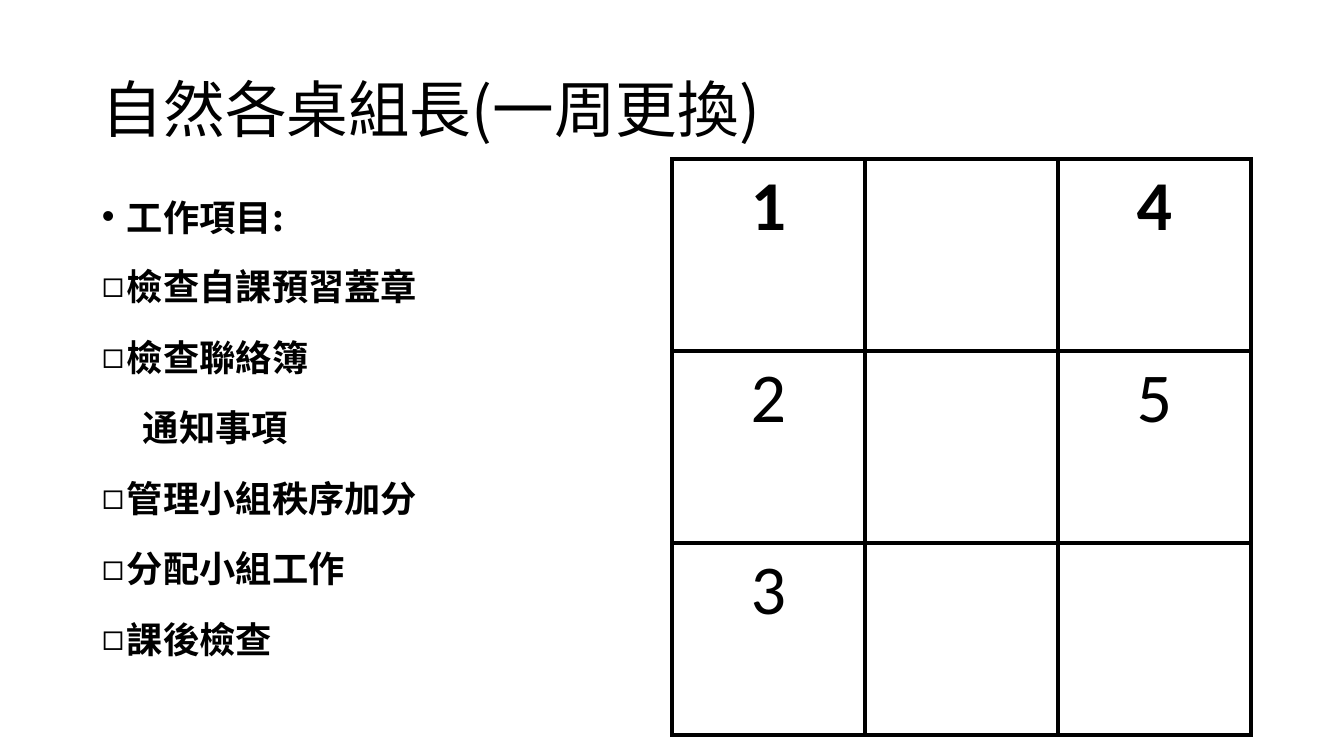
from dataclasses import dataclass

from lxml.etree import SubElement
from pptx import Presentation
from pptx.dml.color import RGBColor
from pptx.enum.text import MSO_ANCHOR, PP_ALIGN
from pptx.oxml.ns import qn
from pptx.util import Emu, Pt


@dataclass(frozen=True)
class Theme:
    ink: str = "000000"
    text_font: str = "Noto Sans CJK JP"
    number_font: str = "Calibri"
    bullet_font: str = "Arial"
    title_size: float = 44
    body_size: float = 25.9
    number_size: float = 50
    border_width: float = 3


THEME = Theme()
EMU_PER_PX = 914400 / 100.8
BOX = "◻"
HEADING = "工作項目:"
TASKS = [
    ("檢查自課預習蓋章", BOX),
    ("檢查聯絡簿", BOX),
    ("通知事項", None),
    ("管理小組秩序加分", BOX),
    ("分配小組工作", BOX),
    ("課後檢查", BOX),
]
DESKS = [["1", "", "4"], ["2", "", "5"], ["3", "", ""]]


def px(length):
    return Emu(round(length * EMU_PER_PX))


def write_text(paragraph, text, size, font=THEME.text_font, bold=False,
               align=PP_ALIGN.LEFT, line_spacing=None, space_before=0):
    paragraph.alignment = align
    paragraph.line_spacing = line_spacing
    paragraph.space_before = Pt(space_before)
    run = paragraph.add_run()
    run.text = text
    run.font.size = Pt(size)
    run.font.bold = bold
    run.font.name = font
    run.font.color.rgb = RGBColor.from_string(THEME.ink)
    SubElement(run.font._element, qn("a:ea"), typeface=font)


def set_indent(paragraph, margin, hanging=0, bullet=None):
    properties = paragraph._p.get_or_add_pPr()
    properties.set("marL", str(px(margin)))
    properties.set("indent", str(-px(hanging)))
    if bullet:
        SubElement(properties, qn("a:buFont"), typeface=THEME.bullet_font)
        SubElement(properties, qn("a:buChar"), char=bullet)


def add_text_frame(slide, left, top, width, height, anchor=MSO_ANCHOR.TOP):
    shape = slide.shapes.add_textbox(px(left), px(top), px(width), px(height))
    frame = shape.text_frame
    frame.word_wrap = True
    frame.vertical_anchor = anchor
    return frame


def add_title(slide, text):
    frame = add_text_frame(slide, 92, 40, 1159, 146, anchor=MSO_ANCHOR.MIDDLE)
    write_text(frame.paragraphs[0], text, THEME.title_size, line_spacing=0.9)


def add_task_list(slide, heading, tasks):
    frame = add_text_frame(slide, 92, 202, 1159, 480)
    paragraph = frame.paragraphs[0]
    write_text(paragraph, heading, THEME.body_size, bold=True,
               line_spacing=0.7, space_before=10)
    set_indent(paragraph, 25, hanging=25, bullet="•")
    for text, bullet in tasks:
        paragraph = frame.add_paragraph()
        write_text(paragraph, text, THEME.body_size, bold=True,
                   line_spacing=Pt(40.4), space_before=10)
        if bullet:
            set_indent(paragraph, 25, hanging=25, bullet=bullet)
        else:
            set_indent(paragraph, 41)


def set_borders(cell):
    properties = cell._tc.get_or_add_tcPr()
    for position, side in enumerate(("a:lnL", "a:lnR", "a:lnT", "a:lnB")):
        line = properties.makeelement(qn(side), {"w": str(Pt(THEME.border_width))})
        fill = SubElement(line, qn("a:solidFill"))
        SubElement(fill, qn("a:srgbClr"), val=THEME.ink)
        properties.insert(position, line)


def add_desk_table(slide, desks, left, top, cell_width, cell_height):
    rows, columns = len(desks), len(desks[0])
    table = slide.shapes.add_table(
        rows, columns, px(left), px(top),
        px(cell_width * columns), px(cell_height * rows)).table
    table.horz_banding = False
    for column in table.columns:
        column.width = px(cell_width)
    for row_index, numbers in enumerate(desks):
        table.rows[row_index].height = px(cell_height)
        for column_index, number in enumerate(numbers):
            cell = table.cell(row_index, column_index)
            cell.fill.background()
            set_borders(cell)
            if number:
                write_text(cell.text_frame.paragraphs[0], number, THEME.number_size,
                           font=THEME.number_font, bold=row_index == 0,
                           align=PP_ALIGN.CENTER)


def main():
    presentation = Presentation()
    presentation.slide_width = px(1344)
    presentation.slide_height = px(756)
    slide = presentation.slides.add_slide(presentation.slide_layouts[6])
    add_title(slide, "自然各桌組長(一周更換)")
    add_task_list(slide, HEADING, TASKS)
    add_desk_table(slide, DESKS, left=672, top=159, cell_width=193, cell_height=192)
    presentation.save("out.pptx")


if __name__ == "__main__":
    main()
